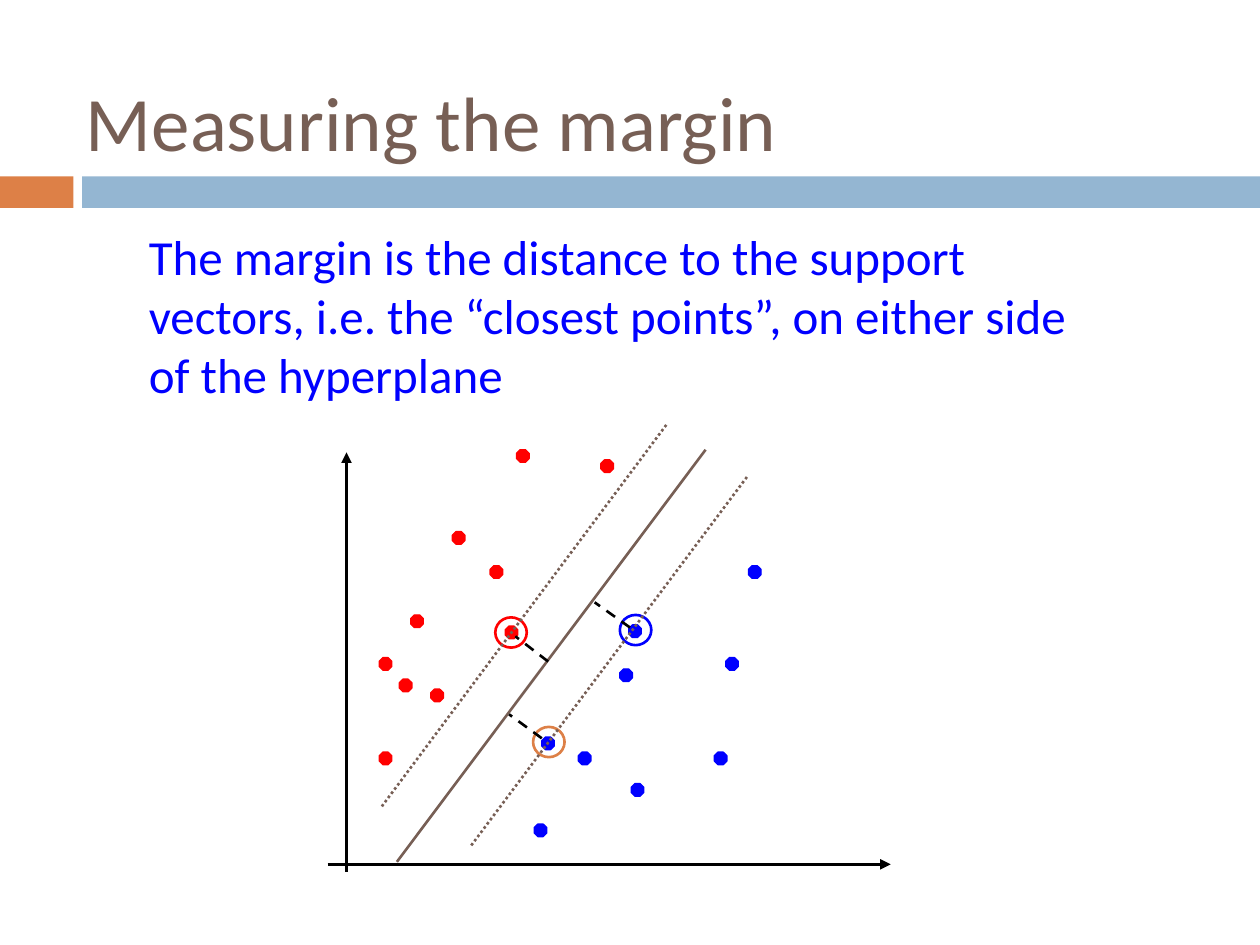
from dataclasses import dataclass

from lxml import etree
from pptx import Presentation
from pptx.dml.color import RGBColor
from pptx.enum import dml, shapes, text
from pptx.oxml.ns import qn
from pptx.util import Pt


@dataclass(frozen=True)
class Theme:
    """Colours, font and type sizes of the slide."""
    brown: str = "775F55"
    orange: str = "DD8047"
    sky: str = "94B6D2"
    red: str = "FF0000"
    blue: str = "0000FF"
    black: str = "000000"
    font: str = "Calibri"
    title: int = 44
    body: int = 28


T = Theme()
DOT = 7.2
RING = (18, 17.3)
RED_POINTS = [
    (93.1, 81.3), (47.7, 109.4), (59.2, 151.8), (29.7, 187.8), (71.5, 61.8),
    (29.7, 133.8), (41.2, 146.1), (101.7, 115.8), (108.2, 15), (156.4, 20.8),
]
BLUE_POINTS = [
    (172.3, 115.1), (143.5, 187.8), (221.2, 187.8), (118.3, 228.9), (167.2, 140.3),
    (122.6, 179.2), (173.7, 205.8), (227.7, 133.8), (240.7, 81.3),
]
AXES = [((11, 256.2), (11, 16.5)), ((0.2, 251.9), (322, 251.9))]
HYPERPLANE = ((39.8, 250.5), (216.2, 15))
MARGIN_EDGES = [((82.3, 241.1), (240.7, 29.4)), ((31.2, 218.8), (193.9, 0.6))]
DISTANCES = [
    ((173, 116.6), (152.8, 102.2)),
    ((122.6, 179.9), (103.9, 166.2)),
    ((126.2, 136), (107.5, 121.6)),
]
SUPPORT_RINGS = [((96, 110.8), T.red), ((117.6, 173.4), T.orange), ((167.2, 109.4), T.blue)]


def add_shape(s, kind, box, fill=None, line=None, width=0.75):
    """Add a preset shape with an optional fill and outline."""
    sp = s.shapes.add_shape(kind, *map(Pt, box))
    sp.shadow.inherit = False
    if fill:
        sp.fill.solid()
        sp.fill.fore_color.rgb = RGBColor.from_string(fill)
    else:
        sp.fill.background()
    if line:
        sp.line.color.rgb = RGBColor.from_string(line)
        sp.line.width = Pt(width)
    else:
        sp.line.fill.background()


def add_line(s, box, ends, color, width=1.5, dash=None, arrow=False):
    """Add a straight line between two points measured from the box corner."""
    left, top = box[:2]
    (x1, y1), (x2, y2) = ends
    c = s.shapes.add_connector(
        shapes.MSO_CONNECTOR.STRAIGHT,
        Pt(left + x1), Pt(top + y1), Pt(left + x2), Pt(top + y2))
    c.line.color.rgb = RGBColor.from_string(color)
    c.line.width = Pt(width)
    if dash:
        c.line.dash_style = dash
    sp_pr = c._element.spPr
    if arrow:
        etree.SubElement(sp_pr.find(qn("a:ln")), qn("a:tailEnd"), type="triangle")
    etree.SubElement(sp_pr, qn("a:effectLst"))


def add_text(s, box, words, size, color, anchor):
    """Add a wrapped text box holding one paragraph."""
    tf = s.shapes.add_textbox(*map(Pt, box)).text_frame
    tf.word_wrap = True
    tf.vertical_anchor = anchor
    tf.text = words
    font = tf.paragraphs[0].runs[0].font
    font.name = T.font
    font.size = Pt(size)
    font.color.rgb = RGBColor.from_string(color)


def add_header(s, box):
    """Place the title above a two-part colour band."""
    left, top, width, height = box
    band, band_top, split, gap = 18, top + height - 18, 42, 5
    rect = shapes.MSO_SHAPE.RECTANGLE
    add_shape(s, rect, (left, band_top, split, band), T.orange)
    add_shape(s, rect, (left + split + gap, band_top, width - split - gap, band), T.sky)
    add_text(s, (left + split, top, width - 2 * split, 78), "Measuring the margin",
             T.title, T.brown, text.MSO_ANCHOR.MIDDLE)


def add_definition(s, box):
    """Place the definition of the margin."""
    add_text(s, box,
             "The margin is the distance to the support vectors, i.e. the “closest "
             "points”, on either side of the hyperplane",
             T.body, T.blue, text.MSO_ANCHOR.TOP)


def add_plot(s, box):
    """Draw the two classes, the hyperplane, its margins and support vectors."""
    left, top = box[:2]
    for ends in AXES:
        add_line(s, box, ends, T.black, width=2, arrow=True)
    for points, color in ((RED_POINTS, T.red), (BLUE_POINTS, T.blue)):
        for x, y in points:
            add_shape(s, shapes.MSO_SHAPE.OCTAGON, (left + x, top + y, DOT, DOT), color, color)
    add_line(s, box, HYPERPLANE, T.brown)
    for (x, y), color in SUPPORT_RINGS:
        add_shape(s, shapes.MSO_SHAPE.OVAL, (left + x, top + y, *RING), line=color, width=1.5)
    for ends in DISTANCES:
        add_line(s, box, ends, T.black, dash=dml.MSO_LINE.DASH)
    for ends in MARGIN_EDGES:
        add_line(s, box, ends, T.brown, dash=dml.MSO_LINE.ROUND_DOT)


def main():
    """Build and save the slide."""
    prs = Presentation()
    prs.slide_width, prs.slide_height = Pt(720), Pt(540)
    s = prs.slides.add_slide(prs.slide_layouts[6])
    add_header(s, (0, 30.2, 720, 88.6))
    add_definition(s, (78, 126, 556.5, 108.7))
    add_plot(s, (187, 242, 322, 257))
    prs.save("out.pptx")


if __name__ == "__main__":
    main()
